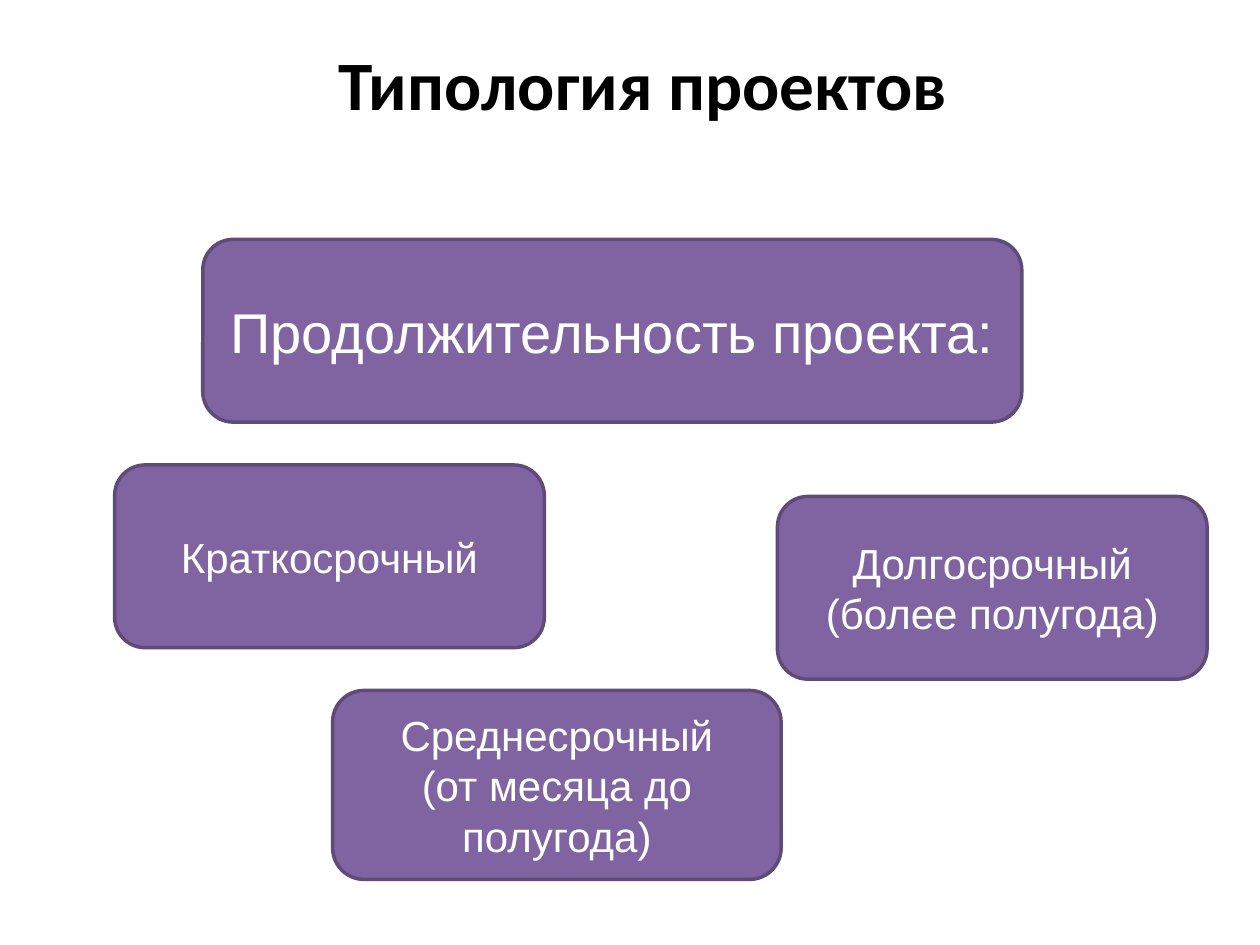
from pptx import Presentation
from pptx.dml.color import RGBColor
from pptx.enum.shapes import MSO_SHAPE as Shape
from pptx.enum.text import MSO_ANCHOR as Anchor, PP_ALIGN as Align
from pptx.util import Inches, Pt

COLORS = {"fill": "8064A2", "border": "5F4A78", "light": "FFFFFF", "dark": "000000"}

# Content: lines, position and size in inches, text size in points
TITLE = "Типология проектов"
CARDS = [
    (["Продолжительность проекта:"], (1.61, 1.9, 6.5, 1.45), 32),
    (["Краткосрочный"], (0.91, 3.69, 3.41, 1.45), 24),
    (["Среднесрочный", "(от месяца до полугода)"], (2.64, 5.48, 3.56, 1.5), 24),
    (["Долгосрочный", "(более полугода)"], (6.17, 3.94, 3.41, 1.45), 24),
]


def rgb(name):
    return RGBColor.from_string(COLORS[name])


def write(frame, lines, size, font="Arial", color="light", bold=False):
    frame.word_wrap = True
    frame.vertical_anchor = Anchor.MIDDLE
    for i, line in enumerate(lines):
        paragraph = frame.paragraphs[0] if i == 0 else frame.add_paragraph()
        paragraph.alignment = Align.CENTER
        run = paragraph.add_run()
        run.text = line
        run.font.name = font
        run.font.size = Pt(size)
        run.font.bold = bold
        run.font.color.rgb = rgb(color)


def main():
    prs = Presentation()
    prs.slide_width, prs.slide_height = Inches(10), Inches(7.5)
    slide = prs.slides.add_slide(prs.slide_layouts[5])

    # Title
    title = slide.shapes.title
    title.left, title.top = Inches(1.14), Inches(0.29)
    title.width, title.height = Inches(7.92), Inches(0.73)
    write(title.text_frame, [TITLE], 39.6, font="Calibri", color="dark", bold=True)

    # Heading card and the three project durations
    for lines, place, size in CARDS:
        card = slide.shapes.add_shape(Shape.ROUNDED_RECTANGLE, *map(Inches, place))
        card.shadow.inherit = False
        card.fill.solid()
        card.fill.fore_color.rgb = rgb("fill")
        card.line.color.rgb = rgb("border")
        card.line.width = Pt(2)
        write(card.text_frame, lines, size)

    prs.save("out.pptx")


if __name__ == "__main__":
    main()
